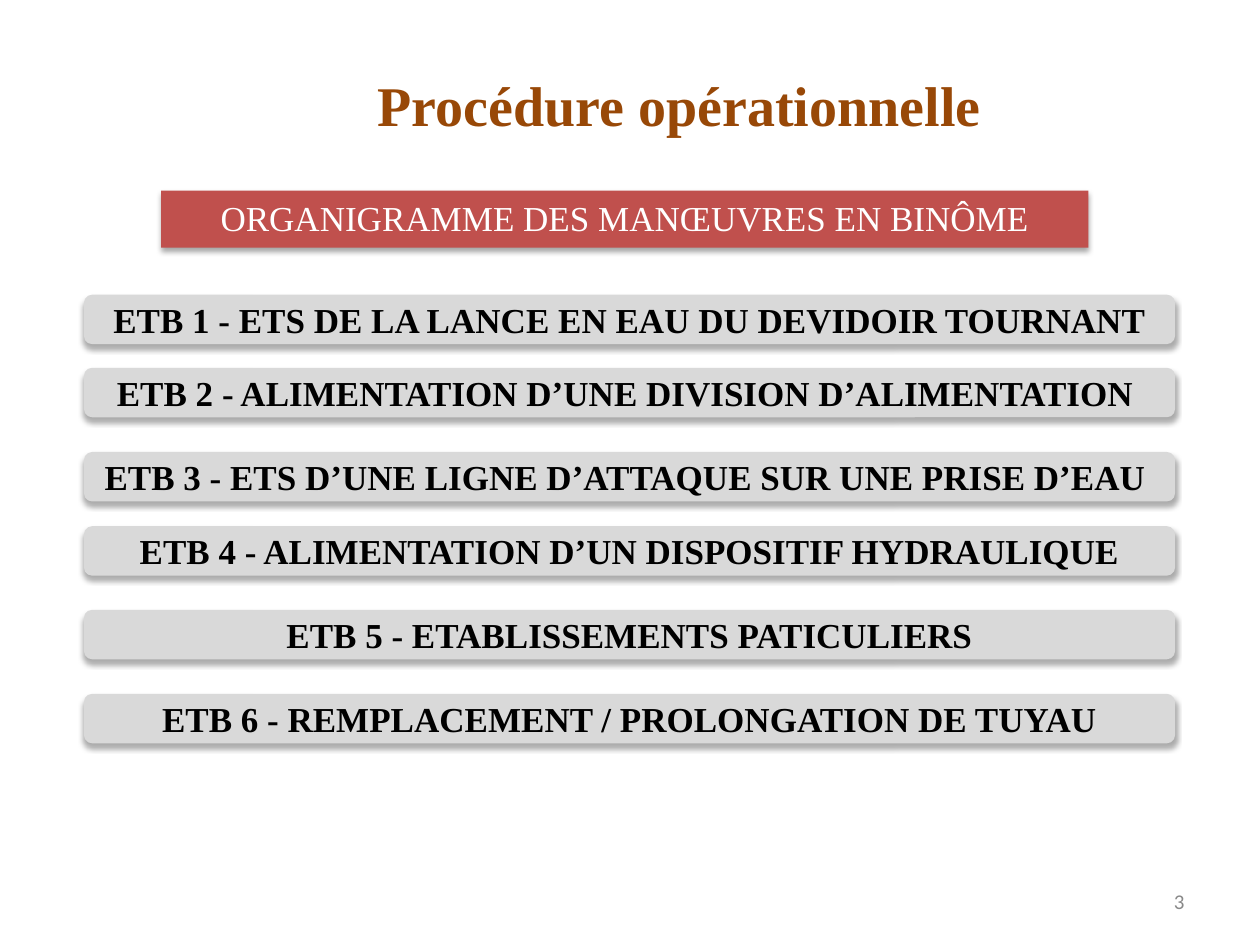
from dataclasses import dataclass

from lxml import etree
from pptx import Presentation
from pptx.dml.color import RGBColor
from pptx.enum import shapes, text
from pptx.oxml import ns
from pptx.util import Pt

BROWN = RGBColor(0x98, 0x48, 0x07)
RED = RGBColor(0xC0, 0x50, 0x4D)
LIGHT_GREY = RGBColor(0xD9, 0xD9, 0xD9)
PAGE_GREY = RGBColor(0x89, 0x89, 0x89)
WHITE = RGBColor(0xFF, 0xFF, 0xFF)
BLACK = RGBColor(0, 0, 0)
SERIF = "Times New Roman"
TITLE_ONLY = 5


@dataclass(frozen=True)
class Shadow:
    """Black shadow falling straight down; lengths in points."""
    opacity: int
    blur: float
    distance: float


@dataclass(frozen=True)
class BarStyle:
    outline: shapes.MSO_SHAPE
    left: float
    width: float
    height: float
    fill: RGBColor
    ink: RGBColor
    bold: bool
    anchor: text.MSO_ANCHOR
    shadow: Shadow


@dataclass(frozen=True)
class Manoeuvre:
    top: float
    label: str


HEADING_STYLE = BarStyle(shapes.MSO_SHAPE.RECTANGLE, 92, 530, 32.5, RED, WHITE,
                         False, text.MSO_ANCHOR.TOP, Shadow(35, 3.1, 1.8))
MANOEUVRE_STYLE = BarStyle(shapes.MSO_SHAPE.ROUNDED_RECTANGLE, 48, 623.5, 28.3,
                           LIGHT_GREY, BLACK, True, text.MSO_ANCHOR.MIDDLE,
                           Shadow(32, 3.5, 2.2))
MANOEUVRES = [
    Manoeuvre(168.4, "ETS DE LA LANCE EN EAU DU DEVIDOIR TOURNANT"),
    Manoeuvre(210.2, "ALIMENTATION D’UNE DIVISION D’ALIMENTATION "),
    Manoeuvre(258.3, "ETS D’UNE LIGNE D’ATTAQUE SUR UNE PRISE D’EAU "),
    Manoeuvre(300.7, "ALIMENTATION D’UN DISPOSITIF HYDRAULIQUE"),
    Manoeuvre(348.5, "ETABLISSEMENTS PATICULIERS"),
    Manoeuvre(396.5, "REMPLACEMENT / PROLONGATION DE TUYAU"),
]


def place(shape, left: float, top: float, width: float, height: float) -> None:
    shape.left, shape.top = Pt(left), Pt(top)
    shape.width, shape.height = Pt(width), Pt(height)


def write(frame, words: str, size: float, color: RGBColor, font_name: str = SERIF,
          bold: bool = False, align=text.PP_ALIGN.CENTER,
          anchor=text.MSO_ANCHOR.MIDDLE) -> None:
    frame.word_wrap = True
    frame.vertical_anchor = anchor
    frame.text = words
    paragraph = frame.paragraphs[0]
    paragraph.alignment = align
    font = paragraph.font
    font.name, font.size, font.bold = font_name, Pt(size), bold
    font.color.rgb = color


def cast_shadow(shape, shadow: Shadow) -> None:
    shape.shadow.inherit = False
    effects = shape._element.spPr.find(ns.qn("a:effectLst"))
    outer = etree.SubElement(effects, ns.qn("a:outerShdw"),
                             blurRad=str(Pt(shadow.blur)),
                             dist=str(Pt(shadow.distance)),
                             dir="5400000", rotWithShape="0")
    black = etree.SubElement(outer, ns.qn("a:srgbClr"), val=str(BLACK))
    etree.SubElement(black, ns.qn("a:alpha"), val=str(shadow.opacity * 1000))


def add_bar(slide, style: BarStyle, top: float, label: str):
    bar = slide.shapes.add_shape(style.outline, Pt(style.left), Pt(top),
                                 Pt(style.width), Pt(style.height))
    bar.fill.solid()
    bar.fill.fore_color.rgb = style.fill
    bar.line.fill.background()
    cast_shadow(bar, style.shadow)
    write(bar.text_frame, label, 20, style.ink, bold=style.bold, anchor=style.anchor)
    return bar


def main() -> None:
    deck = Presentation()
    deck.slide_width, deck.slide_height = Pt(720), Pt(540)
    slide = deck.slides.add_slide(deck.slide_layouts[TITLE_ONLY])

    title = slide.shapes.title
    place(title, 76.5, 21.6, 623.5, 75.6)
    write(title.text_frame, "Procédure opérationnelle", 32, BROWN, bold=True)

    page_number = slide.shapes.add_textbox(Pt(516), Pt(500.5), Pt(168), Pt(28.75))
    write(page_number.text_frame, "3", 12, PAGE_GREY, font_name="Calibri",
          align=text.PP_ALIGN.RIGHT)

    heading = add_bar(slide, HEADING_STYLE, 109, "ORGANIGRAMME DES MANŒUVRES EN BINÔME")
    heading.text_frame.auto_size = text.MSO_AUTO_SIZE.SHAPE_TO_FIT_TEXT

    for number, manoeuvre in enumerate(MANOEUVRES, start=1):
        add_bar(slide, MANOEUVRE_STYLE, manoeuvre.top, f"ETB {number} - {manoeuvre.label}")

    deck.save("out.pptx")


if __name__ == "__main__":
    main()
